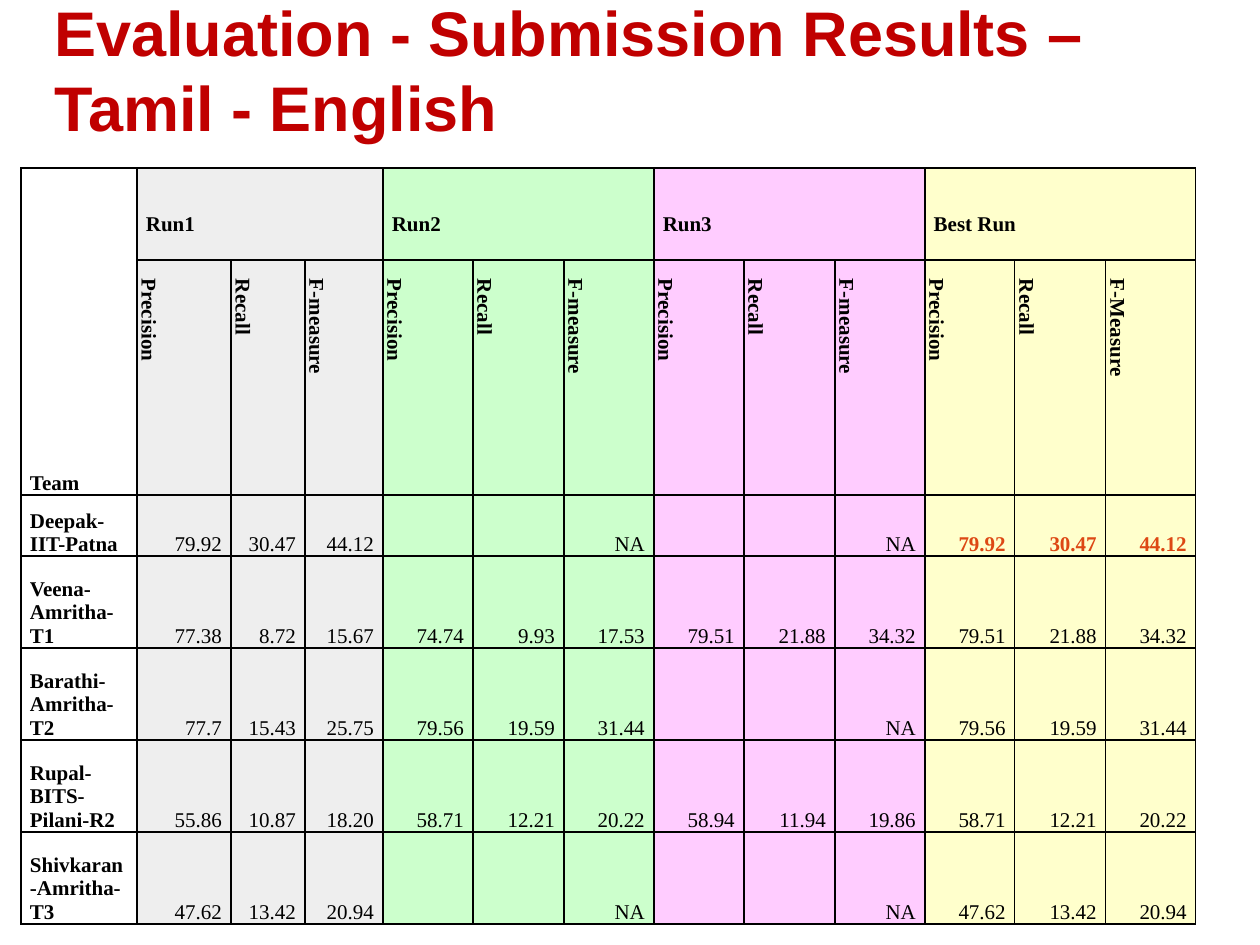
from dataclasses import dataclass

from lxml import etree
from pptx import Presentation
from pptx.dml.color import RGBColor
from pptx.enum.text import MSO_ANCHOR, PP_ALIGN
from pptx.oxml.ns import qn
from pptx.util import Emu, Pt

BOTTOM, MIDDLE = MSO_ANCHOR.BOTTOM, MSO_ANCHOR.MIDDLE
LEFT, RIGHT = PP_ALIGN.LEFT, PP_ALIGN.RIGHT


@dataclass(frozen=True)
class Theme:
    title_font: str = "Arial"
    table_font: str = "Times New Roman"
    title_size: int = 36
    table_size: int = 12
    title: str = "C00000"
    text: str = "000000"
    winner: str = "DD4814"
    border: str = "000000"
    runs: tuple = ("EEEEEE", "CCFFCC", "FFCCFF", "FFFFCC")


THEME = Theme()
PX_PER_INCH = 126
PAD = 9        # side margin of each cell
LINE = 24      # one line of table text
INDENT = 10    # lead-in of the vertical headings

TITLE = "Evaluation - Submission Results – Tamil - English"
RUNS = ("Run1", "Run2", "Run3", "Best Run")
MEASURES = ("Precision", "Recall", "F-measure") * 3 + ("Precision", "Recall", "F-Measure")
MISSING = ("", "", "NA")
COLUMN_WIDTHS = (116, 94, 74, 78) + (90, 91, 90) * 3
ROW_HEIGHTS = (92, 235, 61) + (92,) * 4

# Team, Run1, Run2, Run3, and which of the runs is the best
RESULTS = (
    ("Deepak-IIT-Patna", ("79.92", "30.47", "44.12"), MISSING, MISSING, 1),
    ("Veena-Amritha-T1", ("77.38", "8.72", "15.67"), ("74.74", "9.93", "17.53"),
     ("79.51", "21.88", "34.32"), 3),
    ("Barathi-Amritha-T2", ("77.7", "15.43", "25.75"), ("79.56", "19.59", "31.44"),
     MISSING, 2),
    ("Rupal-BITS-Pilani-R2", ("55.86", "10.87", "18.20"), ("58.71", "12.21", "20.22"),
     ("58.94", "11.94", "19.86"), 2),
    ("Shivkaran-Amritha-T3", ("47.62", "13.42", "20.94"), MISSING, MISSING, 1),
)


def px(length):
    return Emu(round(length * 914400 / PX_PER_INCH))


def style_paragraph(paragraph, font, size, color, bold, align=LEFT):
    paragraph.alignment = align
    paragraph.font.name = font
    paragraph.font.size = Pt(size)
    paragraph.font.bold = bold
    paragraph.font.color.rgb = RGBColor.from_string(color)


def add_title(slide):
    frame = slide.shapes.add_textbox(px(42), px(11), px(1134), px(116)).text_frame
    frame.word_wrap = True
    frame.vertical_anchor = MIDDLE
    frame.text = TITLE
    style_paragraph(frame.paragraphs[0], THEME.title_font, THEME.title_size,
                    THEME.title, True)


def add_borders(cell):
    properties = cell._tc.get_or_add_tcPr()
    for position, side in enumerate(("a:lnL", "a:lnR", "a:lnT", "a:lnB")):
        line = etree.Element(qn(side), w=str(Pt(1)))
        fill = etree.SubElement(line, qn("a:solidFill"))
        etree.SubElement(fill, qn("a:srgbClr"), val=THEME.border)
        properties.insert(position, line)


def format_cell(cell, column):
    """Give a cell its margins, borders and the colour of its run."""
    cell.margin_left = cell.margin_right = px(PAD)
    cell.margin_top = cell.margin_bottom = 0
    cell.vertical_anchor = BOTTOM
    if column:
        cell.fill.solid()
        cell.fill.fore_color.rgb = RGBColor.from_string(THEME.runs[(column - 1) // 3])
    else:
        cell.fill.background()
    add_borders(cell)


def write_cell(cell, text, bold=True, align=LEFT, color=THEME.text):
    cell.text = text
    style_paragraph(cell.text_frame.paragraphs[0], THEME.table_font,
                    THEME.table_size, color, bold, align)


def write_headings(table):
    write_cell(table.cell(0, 0), "Team")
    table.cell(0, 0).merge(table.cell(1, 0))
    for index, run_name in enumerate(RUNS):
        first = 1 + 3 * index
        heading = table.cell(0, first)
        write_cell(heading, run_name)
        heading.margin_bottom = px(LINE)
        heading.merge(table.cell(0, first + 2))
    for column, measure in enumerate(MEASURES, 1):
        heading = table.cell(1, column)
        write_cell(heading, measure)
        heading._tc.get_or_add_tcPr().set("vert", "vert")
        indent = heading.text_frame.paragraphs[0]._p.get_or_add_pPr()
        indent.set("marL", str(px(INDENT)))


def write_results(table):
    for row, (team, *runs, best) in enumerate(RESULTS, 2):
        write_cell(table.cell(row, 0), team)
        scores = [score for run in (*runs, runs[best - 1]) for score in run]
        for column, score in enumerate(scores, 1):
            wins = row == 2 and column > 9
            write_cell(table.cell(row, column), score, wins, RIGHT,
                       THEME.winner if wins else THEME.text)


def add_results_table(slide):
    table = slide.shapes.add_table(
        len(ROW_HEIGHTS), len(COLUMN_WIDTHS), px(21), px(168),
        px(sum(COLUMN_WIDTHS)), px(sum(ROW_HEIGHTS))).table
    table.first_row = table.horz_banding = False
    for column, width in zip(table.columns, COLUMN_WIDTHS):
        column.width = px(width)
    for row, height in zip(table.rows, ROW_HEIGHTS):
        row.height = px(height)
        for column, cell in enumerate(row.cells):
            format_cell(cell, column)
    write_headings(table)
    write_results(table)


def main():
    presentation = Presentation()
    presentation.slide_width, presentation.slide_height = px(1260), px(945)
    slide = presentation.slides.add_slide(presentation.slide_layouts[6])
    add_title(slide)
    add_results_table(slide)
    presentation.save("out.pptx")


if __name__ == "__main__":
    main()
